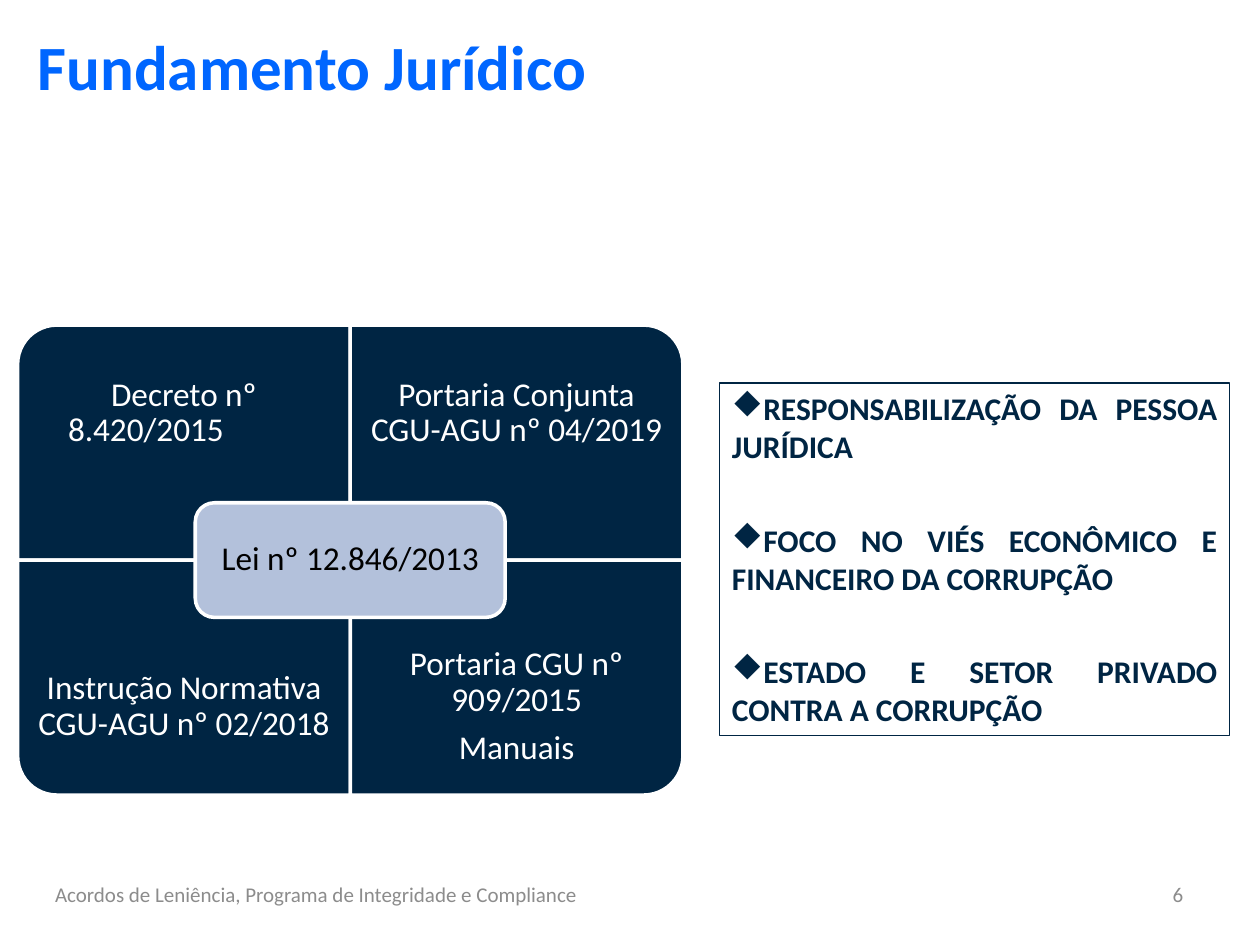
from lxml import etree
from pptx import Presentation
from pptx.dml.color import RGBColor
from pptx.enum import shapes, text
from pptx.oxml.ns import qn
from pptx.util import Inches, Pt

NAVY, WHITE, GRAY = "002543", "FFFFFF", "8C8C8C"
ALIGN, ANCHOR = text.PP_ALIGN, text.MSO_ANCHOR
SHAPE = shapes.MSO_SHAPE


def color(hex_value):
    return RGBColor.from_string(hex_value)


def place(shape, box):
    for name, value in zip(("left", "top", "width", "height"), box):
        setattr(shape, name, Inches(value))


def write(shape, paragraphs, size, font_color, bold=False, inset=None,
          anchor=ANCHOR.MIDDLE, **paragraph_format):
    frame = shape.text_frame
    frame.word_wrap = True
    frame.auto_size = text.MSO_AUTO_SIZE.NONE
    frame.vertical_anchor = anchor
    if inset is not None:
        for side in ("left", "top", "right", "bottom"):
            setattr(frame, f"margin_{side}", Inches(inset))
    frame.text = "\n".join(paragraphs)
    for paragraph in frame.paragraphs:
        for name, value in paragraph_format.items():
            setattr(paragraph, name, value)
        font = paragraph.runs[0].font
        for name, value in {"name": "Calibri", "size": Pt(size), "bold": bold}.items():
            setattr(font, name, value)
        font.color.rgb = color(font_color)


def add_text(slide, box, paragraphs, size, font_color, **options):
    text_box = slide.shapes.add_textbox(*map(Inches, box))
    write(text_box, paragraphs, size, font_color, **options)
    return text_box


def add_panel(slide, kind, box, fill, line, width):
    shape = slide.shapes.add_shape(kind, *map(Inches, box))
    shape.shadow.inherit = False
    if fill:
        shape.fill.solid()
        shape.fill.fore_color.rgb = color(fill)
    else:
        shape.fill.background()
    shape.line.color.rgb = color(line)
    shape.line.width = Pt(width)
    return shape


def add_title(slide, box):
    title = slide.shapes.title
    place(title, box)
    write(title, ["Fundamento Jurídico"], 36, "0066FF", bold=True,
          anchor=ANCHOR.TOP, alignment=ALIGN.LEFT)


def add_law_matrix(slide, box):
    """Four quadrants rounded at their outer corners, with the law in the centre."""
    left, top, total_width, total_height = box
    width, height = total_width / 2, total_height / 2
    label_height = height * 0.75
    label_format = {"alignment": ALIGN.CENTER, "line_spacing": 0.9, "space_after": Pt(6.65)}
    quadrants = [
        (0, 0, 270, ["Decreto nº 8.420/2015\t"]),
        (1, 0, 0, ["Portaria Conjunta CGU-AGU nº 04/2019"]),
        (0, 1, 180, ["Instrução Normativa CGU-AGU nº 02/2018"]),
        (1, 1, 90, ["Portaria CGU nº 909/2015", "Manuais"]),
    ]
    for column, row, rotation, lines in quadrants:
        x, y = left + column * width, top + row * height
        # A quarter turn swaps the sides around the quadrant's centre.
        w, h = (height, width) if rotation % 180 else (width, height)
        panel_box = (x + (width - w) / 2, y + (height - h) / 2, w, h)
        panel = add_panel(slide, SHAPE.ROUND_1_RECTANGLE, panel_box, NAVY, WHITE, 2)
        panel.rotation = rotation
        label_top = y + row * (height - label_height)
        label = add_text(slide, (x, label_top, width, label_height), lines, 19, WHITE,
                         inset=0.15, **label_format)
        for paragraph in label.text_frame.paragraphs:
            paragraph._p.get_or_add_pPr().set("defTabSz", str(Inches(0.92)))

    core_width, core_height = 2.46, 0.91
    core_box = (left + width - core_width / 2, top + height - core_height / 2,
                core_width, core_height)
    core = add_panel(slide, SHAPE.ROUNDED_RECTANGLE, core_box, "B3C1DB", WHITE, 2)
    write(core, ["Lei nº 12.846/2013"], 19, "000000", inset=0.08, **label_format)


def add_diamond_bullet(paragraph):
    properties = paragraph._p.get_or_add_pPr()
    font = etree.SubElement(properties, qn("a:buFont"))
    for name, value in {"typeface": "Wingdings", "pitchFamily": "2", "charset": "2"}.items():
        font.set(name, value)
    # Wingdings draws its "u" as a diamond.
    etree.SubElement(properties, qn("a:buChar")).set("char", "u")


def add_principles(slide, box):
    panel = add_panel(slide, SHAPE.RECTANGLE, box, None, NAVY, 0.75)
    write(panel, ["RESPONSABILIZAÇÃO DA PESSOA JURÍDICA",
                  "FOCO NO VIÉS ECONÔMICO E FINANCEIRO DA CORRUPÇÃO",
                  "ESTADO E SETOR PRIVADO CONTRA A CORRUPÇÃO"],
          18, NAVY, bold=True, anchor=ANCHOR.TOP,
          alignment=ALIGN.JUSTIFY, space_after=Pt(32))
    for paragraph in panel.text_frame.paragraphs:
        add_diamond_bullet(paragraph)


def add_footer(slide, top, height):
    add_text(slide, (0.26, top, 4.5, height),
             ["Acordos de Leniência, Programa de Integridade e Compliance"],
             12, GRAY, alignment=ALIGN.CENTER)
    add_text(slide, (7.6, top, 1.89, height), ["6"], 12, GRAY, alignment=ALIGN.RIGHT)


def main():
    presentation = Presentation()
    presentation.slide_width, presentation.slide_height = Inches(10), Inches(7.5)
    slide = presentation.slides.add_slide(presentation.slide_layouts[5])
    add_title(slide, (0.2, 0.17, 4.62, 0.67))
    add_law_matrix(slide, (0.14, 2.58, 5.28, 3.73))
    add_principles(slide, (5.71, 3.04, 4.05, 2.8))
    add_footer(slide, 6.9, 0.4)
    presentation.save("out.pptx")


if __name__ == "__main__":
    main()
